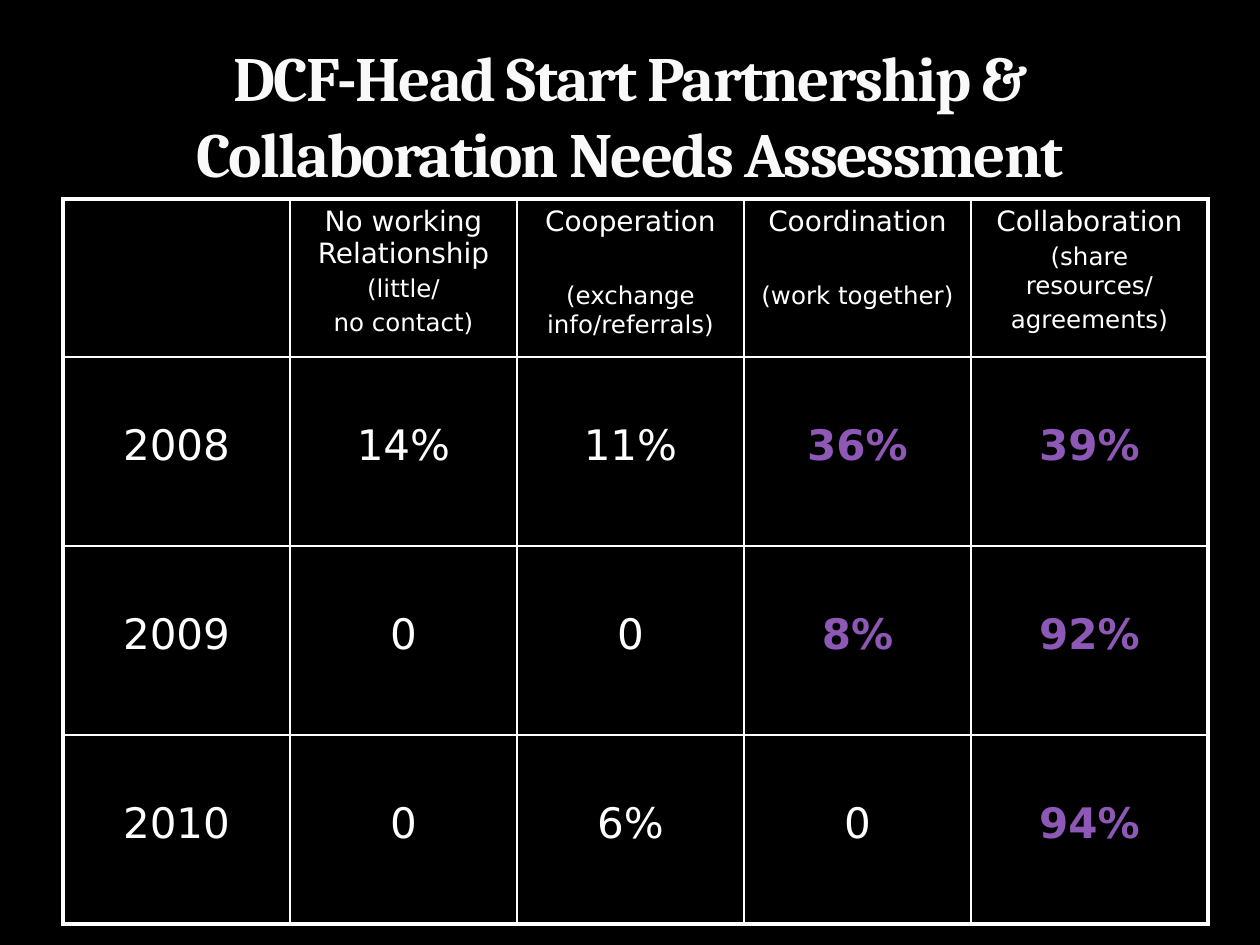
from lxml import etree
from pptx import Presentation
from pptx import util as u
from pptx.dml.color import RGBColor
from pptx.enum import text
from pptx.oxml import ns

BLACK = RGBColor(0x00, 0x00, 0x00)
WHITE = RGBColor(0xFF, 0xFF, 0xFF)
TITLE_WHITE = RGBColor(0xF9, 0xF9, 0xF9)
PURPLE = RGBColor(0x8E, 0x58, 0xB6)

TITLE_FONT, BODY_FONT = "Cambria", "DejaVu Sans"
PX_PER_INCH = 126
COLUMN_WIDTHS = [227, 227, 227, 227, 237]
HEADER_HEIGHT, YEAR_HEIGHT = 158, 189
LINE_GAP, WIDE_GAP = 5, 44
VALUE_TOP = 64
THIN, THICK = 1, 2.25

# level, gap above the first note line, note lines
LEVELS = [
    ("No working Relationship", LINE_GAP, ["(little/", "no contact)"]),
    ("Cooperation", WIDE_GAP, ["(exchange info/referrals)"]),
    ("Coordination", WIDE_GAP, ["(work together)"]),
    ("Collaboration", LINE_GAP, ["(share resources/", "agreements)"]),
]
RESULTS = [
    ("2008", "14%", "11%", "36%", "39%"),
    ("2009", "0", "0", "8%", "92%"),
    ("2010", "0", "6%", "0", "94%"),
]
HIGHLIGHTS = {"36%", "39%", "8%", "92%", "94%"}


def px(n):
    return u.Emu(round(n * u.Inches(1) / PX_PER_INCH))


def add_run(p, content, size, color=WHITE, bold=False, font=BODY_FONT):
    p.alignment = text.PP_ALIGN.CENTER
    r = p.add_run()
    r.text = content
    r.font.name = font
    r.font.size = u.Pt(size)
    r.font.bold = bold
    r.font.color.rgb = color
    return r


def add_title(s):
    title = s.shapes.title
    title.left, title.top, title.width, title.height = map(px, (63, 38, 1134, 158))
    tf = title.text_frame
    tf.word_wrap = True
    tf.auto_size = text.MSO_AUTO_SIZE.NONE
    tf.vertical_anchor = text.MSO_ANCHOR.BOTTOM
    r = add_run(tf.paragraphs[0],
                "DCF-Head Start Partnership & Collaboration Needs Assessment",
                36, TITLE_WHITE, True, TITLE_FONT)
    r.font._element.set("spc", "-100")


def set_borders(cell, widths):
    """Draw white borders; widths maps the sides L, R, T, B to points."""
    tc_pr = cell._tc.get_or_add_tcPr()
    for side, width in widths.items():
        ln = etree.SubElement(tc_pr, ns.qn(f"a:ln{side}"), w=str(u.Pt(width)))
        fill = etree.SubElement(ln, ns.qn("a:solidFill"))
        etree.SubElement(fill, ns.qn("a:srgbClr"), val=str(WHITE))


def format_grid(table):
    last_row, last_col = len(table.rows) - 1, len(table.columns) - 1
    for i in range(last_row + 1):
        for j in range(last_col + 1):
            cell = table.cell(i, j)
            outer = {"L": j == 0, "R": j == last_col,
                     "T": i == 0, "B": i == last_row}
            set_borders(cell, {side: THICK if edge else THIN
                               for side, edge in outer.items()})
            cell.fill.background()


def fill_header(cell, level, gap, notes):
    tf = cell.text_frame
    add_run(tf.paragraphs[0], level, 16)
    for k, note in enumerate(notes):
        p = tf.add_paragraph()
        p.space_before = px(LINE_GAP if k else gap)
        add_run(p, note, 14)


def fill_value(cell, value):
    cell.margin_top = px(VALUE_TOP)
    marked = value in HIGHLIGHTS
    add_run(cell.text_frame.paragraphs[0], value, 24,
            PURPLE if marked else WHITE, marked)


def add_results_table(s):
    heights = [HEADER_HEIGHT] + [YEAR_HEIGHT] * len(RESULTS)
    frame = s.shapes.add_table(len(heights), len(COLUMN_WIDTHS), px(63), px(199),
                               px(sum(COLUMN_WIDTHS)), px(sum(heights)))
    table = frame.table
    table.first_row = table.horz_banding = False
    for column, width in zip(table.columns, COLUMN_WIDTHS):
        column.width = px(width)
    for row, height in zip(table.rows, heights):
        row.height = px(height)
    format_grid(table)
    for j, level in enumerate(LEVELS, 1):
        fill_header(table.cell(0, j), *level)
    for i, values in enumerate(RESULTS, 1):
        for j, value in enumerate(values):
            fill_value(table.cell(i, j), value)


def main():
    prs = Presentation()
    prs.slide_width, prs.slide_height = px(1260), px(945)
    s = prs.slides.add_slide(prs.slide_layouts.get_by_name("Title Only"))
    s.background.fill.solid()
    s.background.fill.fore_color.rgb = BLACK
    add_title(s)
    add_results_table(s)
    prs.save("out.pptx")


if __name__ == "__main__":
    main()
